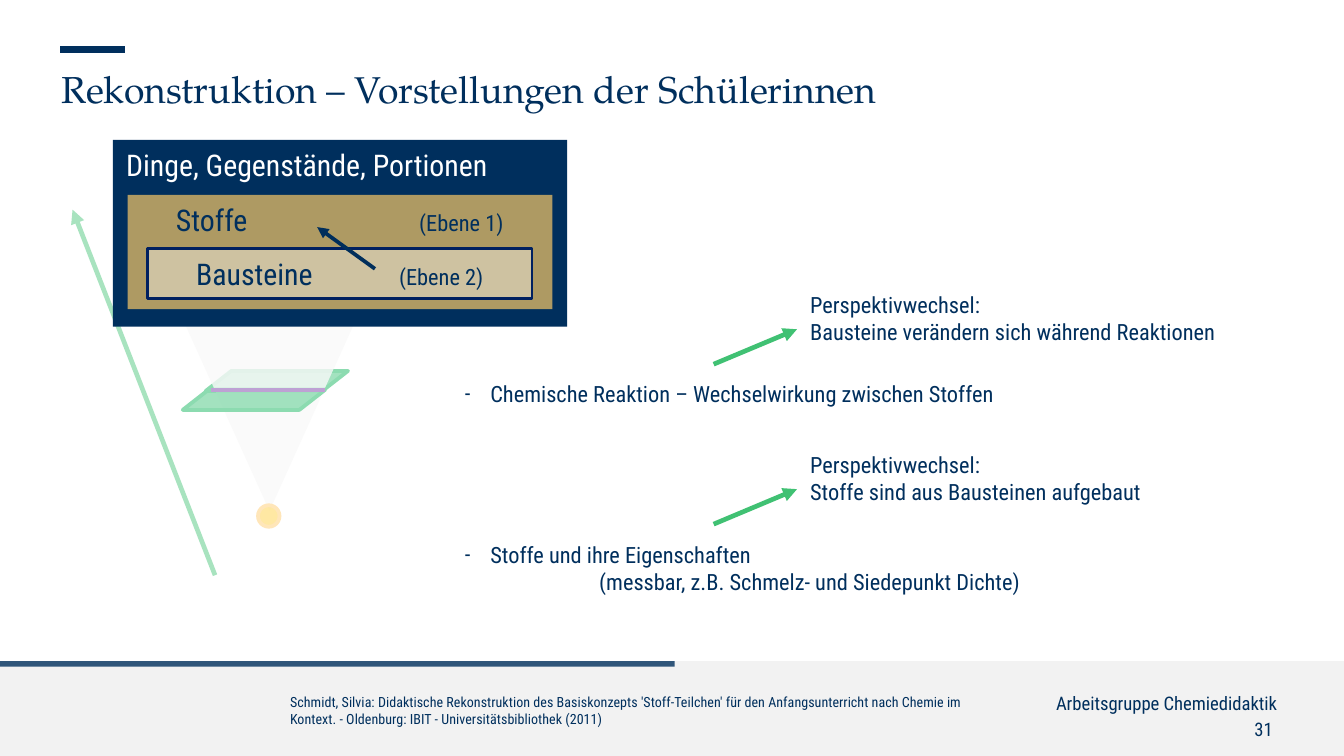
import pptx
import pptx.util
import pptx.dml.color
import pptx.enum.shapes
import pptx.enum.text
import pptx.oxml.ns
import lxml.etree
from typing import Any, NamedTuple, Optional

Inches = pptx.util.Inches
Pt = pptx.util.Pt
Preset = pptx.enum.shapes.MSO_SHAPE
Align = pptx.enum.text.PP_ALIGN

COLORS = {
    "navy": "002F5D", "outline": "002060", "arrow": "002E5B", "sand": "AE9A63",
    "light sand": "CEC2A1", "grey": "F2F2F2", "white": "FFFFFF",
    "green": "00B050", "light green": "40C173", "orange": "FFC000",
    "light orange": "FFC864", "purple": "7030A0",
}
BODY_FONT = "Roboto Condensed"
TITLE_FONT = "TeX Gyre Pagella"


class Form(NamedTuple):
    preset: Any
    area: tuple
    fill: str
    opacity: int = 100
    line: Optional[str] = None
    width: float = 2
    rotation: int = 0
    adjustment: Optional[float] = None


class Stroke(NamedTuple):
    start: tuple
    end: tuple
    color: str
    width: float
    arrow: bool = True


class Level(NamedTuple):
    form: Form
    name: str
    label: str
    color: str
    inset: float
    tab: float


class Label(NamedTuple):
    area: tuple
    lines: tuple
    size: float = 12
    align: Any = Align.LEFT
    inset: tuple = (0.1, 0.05)


def rgb(name: str) -> pptx.dml.color.RGBColor:
    return pptx.dml.color.RGBColor.from_string(COLORS[name])


def add_element(parent: Any, tag: str, **attributes: str) -> Any:
    return lxml.etree.SubElement(parent, pptx.oxml.ns.qn(tag), **attributes)


def style(span: Any, size: float, color: str = "navy", font: str = BODY_FONT) -> None:
    span.font.name = font
    span.font.size = Pt(size)
    span.font.color.rgb = rgb(color)


def set_frame(frame: Any, inset: tuple) -> None:
    frame.word_wrap = True
    frame.vertical_anchor = pptx.enum.text.MSO_ANCHOR.TOP
    frame.margin_left = frame.margin_right = Inches(inset[0])
    frame.margin_top = frame.margin_bottom = Inches(inset[1])


def draw_form(page: Any, form: Form) -> Any:
    shape = page.shapes.add_shape(form.preset, *map(Inches, form.area))
    shape.shadow.inherit = False
    shape.rotation = form.rotation
    if form.adjustment is not None:
        shape.adjustments[0] = form.adjustment
    shape.fill.solid()
    shape.fill.fore_color.rgb = rgb(form.fill)
    if form.opacity < 100:
        color = shape.fill._xPr.find(".//" + pptx.oxml.ns.qn("a:srgbClr"))
        add_element(color, "a:alpha", val=str(form.opacity * 1000))
    if form.line:
        shape.line.color.rgb = rgb(form.line)
        shape.line.width = Pt(form.width)
    else:
        shape.line.fill.background()
    return shape


def draw_stroke(page: Any, stroke: Stroke) -> None:
    line = page.shapes.add_connector(
        pptx.enum.shapes.MSO_CONNECTOR.STRAIGHT,
        *map(Inches, stroke.start + stroke.end))
    line.line.color.rgb = rgb(stroke.color)
    line.line.width = Pt(stroke.width)
    if stroke.arrow:
        add_element(line.line._get_or_add_ln(), "a:tailEnd", type="triangle")
    add_element(line._element.spPr, "a:effectLst")


def draw_level(page: Any, level: Level) -> None:
    frame = draw_form(page, level.form).text_frame
    set_frame(frame, (level.inset, 0.05))
    frame.margin_right = Inches(0)
    para = frame.paragraphs[0]
    para.alignment = Align.LEFT
    if level.label:
        tabs = add_element(para._p.get_or_add_pPr(), "a:tabLst")
        add_element(tabs, "a:tab", pos=str(Inches(level.tab)), algn="l")
    name = para.add_run()
    name.text = level.name
    style(name, 16, level.color)
    if level.label:
        label = para.add_run()
        label.text = "\t" + level.label
        style(label, 12, level.color)


def draw_label(page: Any, label: Label) -> Any:
    frame = page.shapes.add_textbox(*map(Inches, label.area)).text_frame
    set_frame(frame, label.inset)
    frame.text = "\n".join(label.lines)
    for para in frame.paragraphs:
        para.alignment = label.align
        for span in para.runs:
            style(span, label.size)
    return frame


def indent(para: Any, left: float, bullet: str = "") -> None:
    properties = para._p.get_or_add_pPr()
    properties.set("marL", str(Inches(left)))
    properties.set("indent", str(Inches(-left if bullet else 0)))
    if bullet:
        add_element(properties, "a:buFont", typeface=BODY_FONT)
        add_element(properties, "a:buChar", char=bullet)
        add_element(para._p, "a:endParaRPr", sz="1200")


def draw_title(page: Any, text: str) -> None:
    title = page.shapes.title
    title.left, title.top, title.width, title.height = map(Inches, (0.46, 0.49, 7, 0.34))
    set_frame(title.text_frame, (0, 0))
    title.text_frame.text = text
    para = title.text_frame.paragraphs[0]
    para.alignment = Align.LEFT
    style(para.runs[0], 20, font=TITLE_FONT)


def plane(left: float, top: float) -> Form:
    return Form(Preset.PARALLELOGRAM, (left, top, 1.06, 0.15), "green", 80,
                "green", adjustment=1.28)


FOOTER = [
    Form(Preset.RECTANGLE, (0, 4.92, 10, 0.71), "grey"),
    Form(Preset.RECTANGLE, (0, 4.92, 5.02, 0.04), "navy", 80),
]
CONE = [
    plane(1.53, 2.76),
    Form(Preset.ISOSCELES_TRIANGLE, (1.15, 1.91, 1.71, 1.89), "grey", 80, rotation=180),
    Form(Preset.OVAL, (1.92, 3.76, 0.16, 0.16), "orange", 80, "light orange"),
    plane(1.36, 2.9),
]
CONE_STROKES = [
    Stroke((1.57, 2.9), (2.42, 2.9), "purple", 2.25, False),
    Stroke((1.6, 4.28), (0.54, 1.56), "light green", 2.5),
]
VEIL = Form(Preset.RECTANGLE, (0.4, 1.05, 3.01, 3.38), "white", 55)
LEVELS = [
    Level(Form(Preset.RECTANGLE, (0.84, 1.04, 3.38, 1.39), "navy"),
          "Dinge, Gegenstände, Portionen", "", "white", 0.1, 0),
    Level(Form(Preset.RECTANGLE, (0.95, 1.45, 3.16, 0.85), "sand"),
          "Stoffe", "(Ebene 1)", "navy", 0.36, 1.81),
    Level(Form(Preset.RECTANGLE, (1.1, 1.85, 2.86, 0.37), "light sand", 100, "outline", 1.5),
          "Bausteine", "(Ebene 2)", "navy", 0.36, 1.51),
]
LABELS = [
    Label((3.38, 5.1, 6.22, 0.16), ("Arbeitsgruppe Chemiedidaktik",), 10, Align.RIGHT),
    Label((3.85, 5.34, 5.62, 0.17), ("31",), 10, Align.RIGHT, (0, 0)),
    Label((2.06, 5.11, 5.46, 0.36), (
        "Schmidt, Silvia: Didaktische Rekonstruktion des Basiskonzepts 'Stoff-Teilchen' "
        "für den Anfangsunterricht nach Chemie im Kontext. - Oldenburg: IBIT - "
        "Universitätsbibliothek (2011)",), 7.5),
]
STATEMENTS = Label((3.36, 2.78, 5.28, 1.73), (
    "Chemische Reaktion – Wechselwirkung zwischen Stoffen",
    "Stoffe und ihre Eigenschaften",
    "(messbar, z.B. Schmelz- und Siedepunkt Dichte)"))
CHANGES = {
    2.12: "Bausteine verändern sich während Reaktionen",
    3.31: "Stoffe sind aus Bausteinen aufgebaut",
}


def main() -> None:
    deck = pptx.Presentation()
    deck.slide_width = Inches(10)
    deck.slide_height = deck.slide_width * 9 // 16
    page = deck.slides.add_slide(deck.slide_layouts[5])
    draw_title(page, "Rekonstruktion – Vorstellungen der Schülerinnen")
    draw_stroke(page, Stroke((0.45, 0.37), (0.93, 0.37), "navy", 3.5, False))
    for form in FOOTER + CONE:
        draw_form(page, form)
    for label in LABELS:
        draw_label(page, label)
    for stroke in CONE_STROKES:
        draw_stroke(page, stroke)
    draw_form(page, VEIL)
    for level in LEVELS:
        draw_level(page, level)
    draw_stroke(page, Stroke((2.79, 2), (2.36, 1.69), "arrow", 2))
    reaction, properties, example = draw_label(page, STATEMENTS).paragraphs
    indent(reaction, 0.19, "-")
    indent(properties, 0.19, "-")
    indent(example, 1)
    properties.space_before = Pt(72)
    for top, text in CHANGES.items():
        draw_label(page, Label((5.93, top, 4, 0.71), ("Perspektivwechsel:", text)))
        draw_stroke(page, Stroke((5.31, top + 0.59), (5.93, top + 0.33), "light green", 2.5))
    deck.save("out.pptx")


if __name__ == "__main__":
    main()
